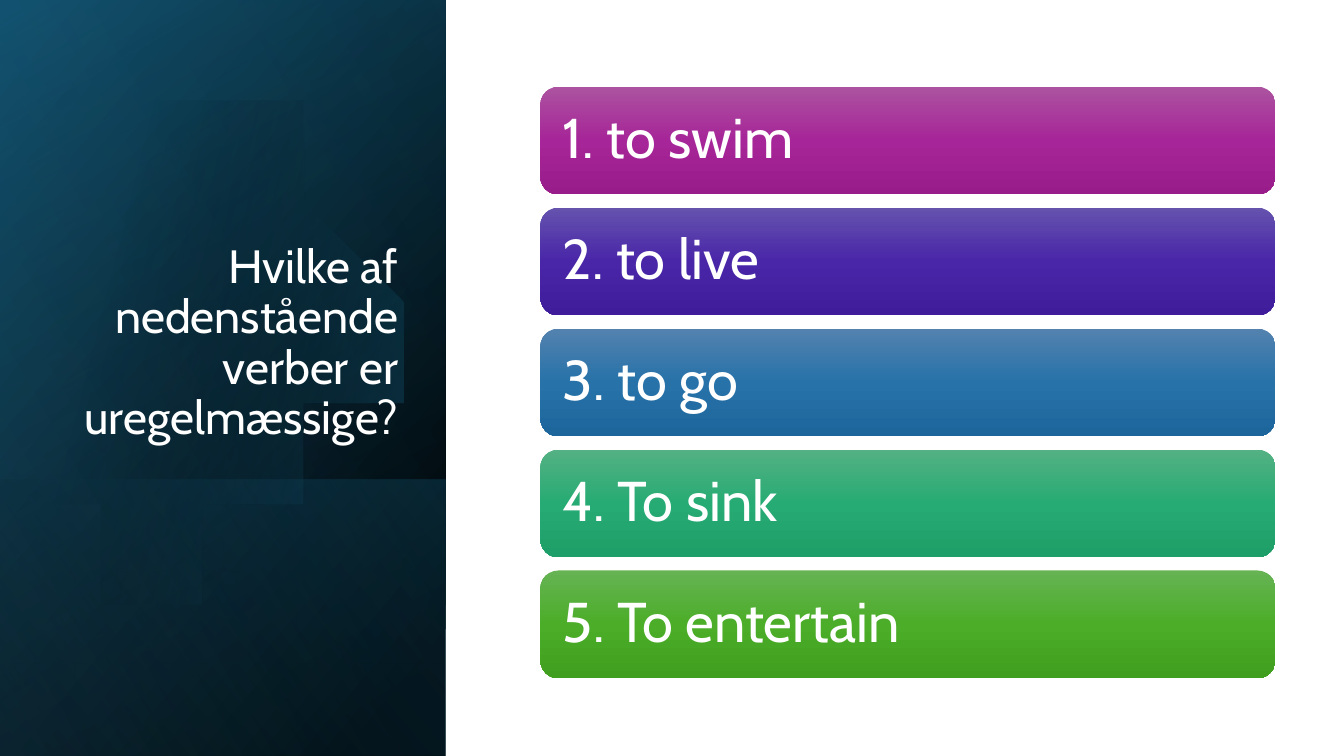
"""Quiz slide: a dark question panel beside five numbered verb bars."""
from lxml import etree
from pptx import Presentation
from pptx import util as u
from pptx.dml.color import RGBColor
from pptx.enum import shapes, text
from pptx.oxml.ns import qn

COLORS = {"white": "FFFFFF", "black": "000000", "navy": "104862", "teal": "156082", "sky": "46B1E1"}
VERBS = [
    ("1. to swim", ("AC53A0", "A62598", "991C8B")),
    ("2. to live", ("6553AE", "4926A8", "3E1C9A")),
    ("3. to go", ("5382AF", "2772A9", "1D669C")),
    ("4. To sink", ("54B183", "27AB74", "1E9E68")),
    ("5. To entertain", ("66B354", "4BAD28", "409F1E")),
]
PANEL = (-1.54, 1.54, 7.5, 4.42)
PANEL_FOOT = (0.84, 3.92, 2.74, 4.42)
DISC_START = (1.49, 1.1)
DISC_RIGHT = [
    ((2.46, 1.12), (3.35, 1.77), (3.63, 2.75)),
    ((3.98, 3.97), (3.28, 5.23), (2.07, 5.58)),
    ((1.31, 5.8), (0.53, 5.61), (-0.03, 5.14)),
]
DISC_CUT = [(-0.15, 5.03), (-0.15, 1.75), (0, 1.61)]
DISC_TOP = [((0.23, 1.42), (0.5, 1.28), (0.8, 1.19)), ((1.03, 1.13), (1.26, 1.1), (1.49, 1.1))]


def paint(shape, stops, angle):
    """Fill with a linear gradient of (position, colour, opacity) stops, without outline."""
    shape.shadow.inherit = False
    shape.line.fill.background()
    shape.fill.gradient()
    shape.fill.gradient_angle = 360 - angle
    stop_list = shape._element.spPr.find(qn("a:gradFill")).find(qn("a:gsLst"))
    for old_stop in list(stop_list):
        stop_list.remove(old_stop)
    for position, color, opacity in stops:
        stop = etree.SubElement(stop_list, qn("a:gs"), pos=str(position * 1000))
        tint = etree.SubElement(stop, qn("a:srgbClr"), val=color)
        if opacity < 100:
            etree.SubElement(tint, qn("a:alpha"), val=str(opacity * 1000))


def write(shape, wording, size, frame_format, align):
    """Put one white paragraph into a shape."""
    frame = shape.text_frame
    for key, value in frame_format.items():
        setattr(frame, key, value)
    paragraph = frame.paragraphs[0]
    for key, value in {"alignment": align, "line_spacing": 0.9}.items():
        setattr(paragraph, key, value)
    run = paragraph.add_run()
    run.text = wording
    for key, value in {"name": "Cabin", "size": u.Pt(size)}.items():
        setattr(run.font, key, value)
    run.font.color.rgb = RGBColor.from_string(COLORS["white"])


def add_panel(slide, box, stops, angle):
    """Add a mirrored, quarter-turned gradient layer."""
    panel = slide.shapes.add_shape(shapes.MSO_SHAPE.RECTANGLE, *map(u.Inches, box))
    panel.rotation = 90
    panel._element.spPr.xfrm.set("flipH", "1")
    paint(panel, stops, angle)


def curve_points(start, curves, steps=16):
    """Return points along a chain of cubic curves."""
    points = []
    for first, second, end in curves:
        for step in range(1, steps + 1):
            t = step / steps
            weights = ((1 - t) ** 3, 3 * t * (1 - t) ** 2, 3 * t * t * (1 - t), t ** 3)
            corners = (start, first, second, end)
            points.append(tuple(sum(w * c[axis] for w, c in zip(weights, corners)) for axis in (0, 1)))
        start = end
    return points


def add_disc(slide):
    """Add the translucent disc that is cut off at the left."""
    outline = curve_points(DISC_START, DISC_RIGHT) + DISC_CUT + curve_points(DISC_CUT[-1], DISC_TOP)
    builder = slide.shapes.build_freeform(*DISC_START, scale=u.Inches(1))
    builder.add_line_segments(outline, close=True)
    paint(builder.convert_to_shape(), [(29, COLORS["black"], 0), (100, COLORS["teal"], 43)], 14)


def add_question(slide):
    """Add the right-aligned question."""
    question = slide.shapes.add_textbox(*map(u.Inches, (0.64, 1.84, 3.41, 2.62)))
    frame_format = {"word_wrap": True, "vertical_anchor": text.MSO_ANCHOR.BOTTOM}
    write(question, "Hvilke af nedenstående verber er uregelmæssige?", 33.3, frame_format, text.PP_ALIGN.RIGHT)


def add_verb_bar(slide, row, wording, shades):
    """Add one rounded bar holding a verb."""
    bar = slide.shapes.add_shape(
        shapes.MSO_SHAPE.ROUNDED_RECTANGLE, *map(u.Inches, (5.36, 0.86 + 1.2 * row, 7.29, 1.07)))
    paint(bar, [(50 * i, shade, 100) for i, shade in enumerate(shades)], 90)
    frame_format = {f"margin_{side}": u.Inches(0.17) for side in ("left", "top", "right", "bottom")}
    frame_format |= {"word_wrap": True, "vertical_anchor": text.MSO_ANCHOR.MIDDLE}
    write(bar, wording, 40, frame_format, text.PP_ALIGN.LEFT)


def main():
    """Build and save the slide."""
    deck = Presentation()
    deck.slide_width, deck.slide_height = u.Inches(13.33), u.Inches(7.5)
    slide = deck.slides.add_slide(deck.slide_layouts[6])
    black, teal = COLORS["black"], COLORS["teal"]
    add_panel(slide, PANEL, [(8, black, 100), (100, COLORS["navy"], 100)], 50)
    add_panel(slide, PANEL, [(0, black, 0), (99, teal, 46)], 30)
    add_panel(slide, PANEL_FOOT, [(2, teal, 29), (100, black, 30)], 130)
    add_disc(slide)
    add_panel(slide, PANEL, [(0, black, 0), (99, COLORS["sky"], 11)], 120)
    add_question(slide)
    for row, (wording, shades) in enumerate(VERBS):
        add_verb_bar(slide, row, wording, shades)
    deck.save("out.pptx")


if __name__ == "__main__":
    main()
